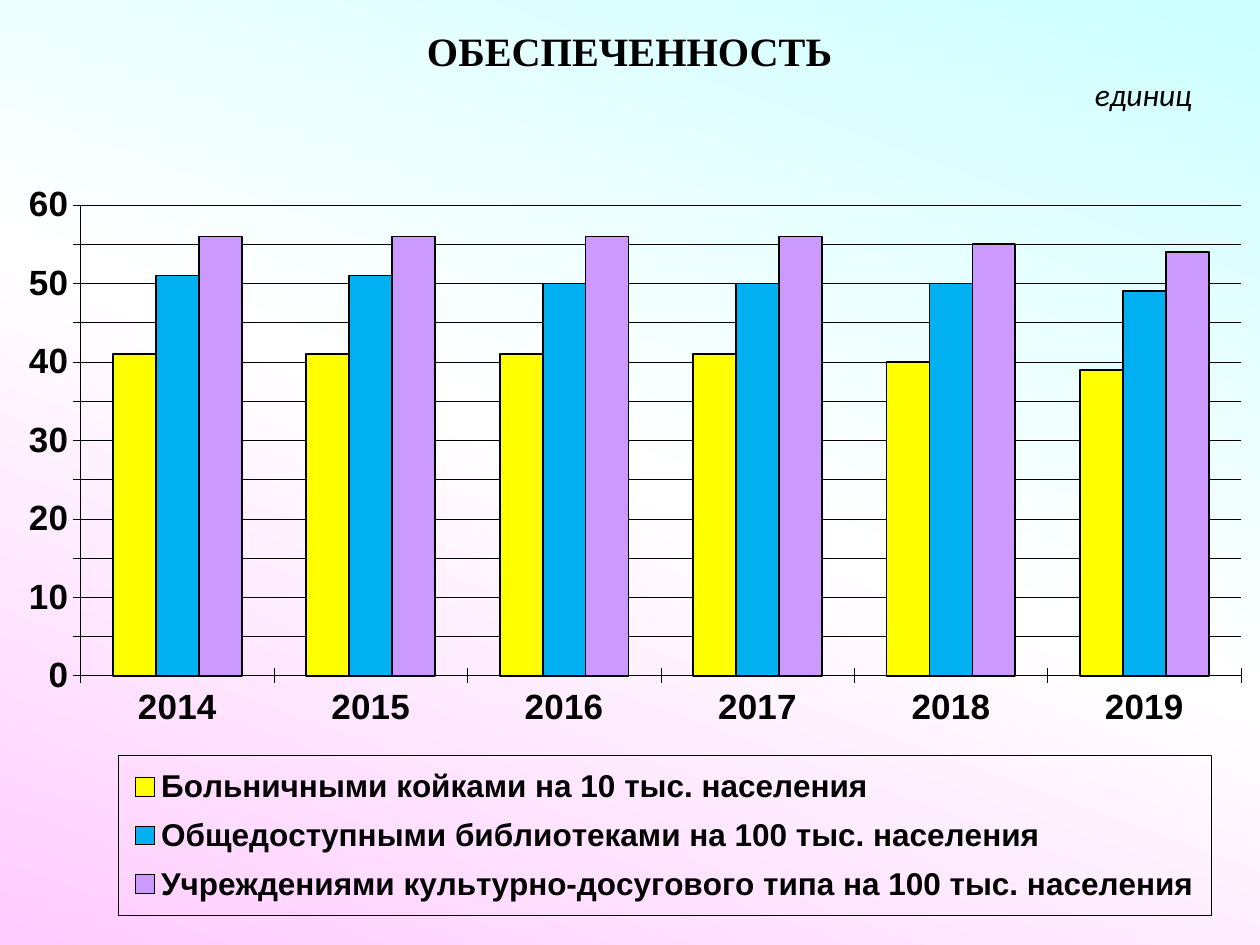
from copy import deepcopy

from lxml import etree
from pptx import Presentation
from pptx.chart.data import CategoryChartData
from pptx.dml.color import RGBColor
from pptx.enum.chart import (XL_CHART_TYPE, XL_LEGEND_POSITION,
                             XL_TICK_LABEL_POSITION, XL_TICK_MARK)
from pptx.enum.text import PP_ALIGN
from pptx.oxml import parse_xml
from pptx.oxml.ns import nsdecls, qn
from pptx.util import Inches, Pt

COLUMN = XL_CHART_TYPE.COLUMN_CLUSTERED
RIGHT = XL_LEGEND_POSITION.RIGHT
LOW = XL_TICK_LABEL_POSITION.LOW
CROSS = XL_TICK_MARK.CROSS
CENTER = PP_ALIGN.CENTER

BLACK = RGBColor(0, 0, 0)
WHITE = RGBColor(0xFF, 0xFF, 0xFF)
CYAN = RGBColor(0xCC, 0xFF, 0xFF)
PINK = RGBColor(0xFF, 0xCC, 0xFF)
YELLOW = RGBColor(0xFF, 0xFF, 0)
BLUE = RGBColor(0, 0xB0, 0xF0)
VIOLET = RGBColor(0xCC, 0x99, 0xFF)

YEARS = [str(year) for year in range(2014, 2020)]
SERIES = [
    ("Больничными койками на 10 тыс. населения",
     (41, 41, 41, 41, 40, 39), YELLOW),
    ("Общедоступными библиотеками на 100 тыс. населения",
     (51, 51, 50, 50, 50, 49), BLUE),
    ("Учреждениями культурно-досугового типа на 100 тыс. населения",
     (56, 56, 56, 56, 55, 54), VIOLET),
]


def style(font, size, name="Arial", bold=True, italic=False):
    font.size, font.name = Pt(size), name
    font.bold, font.italic = bold, italic
    font.color.rgb = BLACK


def stroke(line, width):
    line.color.rgb = BLACK
    line.width = Pt(width)


def add_text(slide, text, box, align=None, wrap=True, **look):
    frame = slide.shapes.add_textbox(*map(Inches, box)).text_frame
    frame.word_wrap = wrap
    para = frame.paragraphs[0]
    para.alignment = align
    run = para.add_run()
    run.text = text
    style(run.font, **look)


def layout(x, y, w, h, inner=False):
    """Manual chart layout in fractions of the chart area."""
    root = etree.fromstring(f"<c:layout {nsdecls('c')}><c:manualLayout/></c:layout>")
    parts = [("layoutTarget", "inner")] if inner else []
    parts += [("xMode", "edge"), ("yMode", "edge"),
              ("x", x), ("y", y), ("w", w), ("h", h)]
    for tag, val in parts:
        etree.SubElement(root[0], qn(f"c:{tag}")).set("val", str(val))
    return root


def paint_back(slide):
    fill = slide.background.fill
    fill.gradient()
    fill.gradient_angle = 250
    stops = slide._element.find(".//" + qn("a:gsLst"))
    stops.insert(1, deepcopy(stops[0]))
    for stop, color, place in zip(fill.gradient_stops,
                                  (CYAN, WHITE, PINK), (0, 0.5, 1)):
        stop.color.rgb = color
        stop.position = place


def add_legend(chart):
    chart.has_legend = True
    legend = chart.legend
    legend.position = RIGHT
    legend.include_in_layout = False
    style(legend.font, 18)
    root = legend._element
    for old in root.findall(qn("c:layout")):
        root.remove(old)
    root.find(qn("c:legendPos")).addnext(layout(0.094, 0.8, 0.867, 0.195))
    # Thin frame without fill
    root.find(qn("c:overlay")).addnext(parse_xml(
        f'<c:spPr {nsdecls("c", "a")}><a:noFill/><a:ln w="{Pt(0.25)}"><a:solidFill>'
        f'<a:srgbClr val="{BLACK}"/></a:solidFill></a:ln></c:spPr>'))


def add_bars(slide, box):
    data = CategoryChartData()
    data.categories = YEARS
    for name, vals, _ in SERIES:
        data.add_series(name, vals)
    chart = slide.shapes.add_chart(COLUMN, *map(Inches, box), data).chart
    chart.has_title = False
    style(chart.font, 25.8)

    # Columns
    plot = chart.plots[0]
    plot.gap_width, plot.overlap = 150, 0
    plot.vary_by_categories = False
    for item, (_, _, color) in zip(plot.series, SERIES):
        item.format.fill.solid()
        item.format.fill.fore_color.rgb = color
        stroke(item.format.line, 1)

    # Axes
    for axis in (chart.category_axis, chart.value_axis):
        axis.major_tick_mark = CROSS
        style(axis.tick_labels.font, 20)
        stroke(axis.format.line, 0.25)
    chart.category_axis.tick_label_position = LOW
    scale = chart.value_axis
    scale.minimum_scale, scale.maximum_scale, scale.major_unit = 0, 60, 5
    stroke(scale.major_gridlines.format.line, 0.25)

    # Plot area and legend
    area = chart._chartSpace.find(".//" + qn("c:plotArea"))
    for old in area.findall(qn("c:layout")):
        area.remove(old)
    area.insert(0, layout(0.064, 0.13, 0.921, 0.573, inner=True))
    add_legend(chart)


def main():
    deck = Presentation()
    deck.slide_width, deck.slide_height = Inches(10), Inches(7.5)
    slide = deck.slides.add_slide(deck.slide_layouts[6])
    paint_back(slide)
    add_bars(slide, (0, 0.78, 10, 6.52))
    add_text(slide, "ОБЕСПЕЧЕННОСТЬ", (0, 0.16, 10, 0.62), align=CENTER,
             size=23, name="Times New Roman")
    add_text(slide, "единиц", (8.59, 0.55, 0.98, 0.4), wrap=False,
             size=18, name="Calibri", bold=False, italic=True)
    deck.save("out.pptx")


if __name__ == "__main__":
    main()
